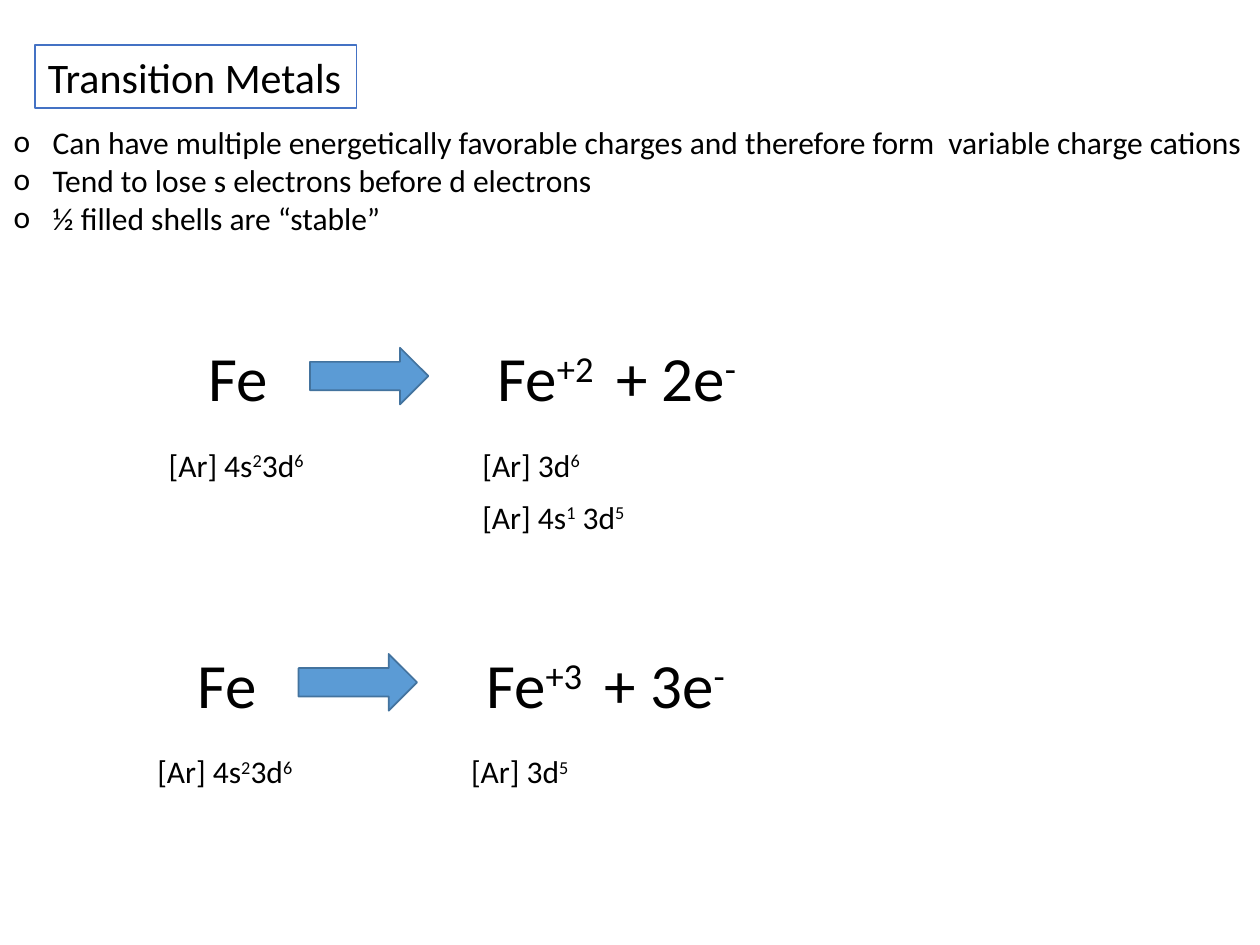
from lxml.etree import SubElement
from pptx import Presentation
from pptx.dml.color import RGBColor
from pptx.enum.shapes import MSO_SHAPE as SHAPE
from pptx.enum.text import MSO_ANCHOR as ANCHOR, MSO_AUTO_SIZE as AUTO, PP_ALIGN as ALIGN
from pptx.oxml.ns import qn
from pptx.util import Inches, Pt


def color(value):
    return RGBColor.from_string(value)


class SlideBuilder:
    font = "Calibri"
    ink = "000000"
    body_size = 18
    formula_size = 36

    def __init__(self, slide):
        self.s = slide

    def place(self, sp, x, y, w, h):
        sp.left, sp.top, sp.width, sp.height = map(Inches, (x, y, w, h))

    def paint(self, sp, fill, line):
        sp.fill.solid()
        sp.fill.fore_color.rgb = color(fill)
        sp.line.color.rgb = color(line)
        sp.line.width = Pt(1)

    def style(self, tf, size, auto_size=AUTO.SHAPE_TO_FIT_TEXT):
        tf.word_wrap = False
        tf.auto_size = auto_size
        tf.vertical_anchor = ANCHOR.TOP
        for p in tf.paragraphs:
            p.alignment = ALIGN.LEFT
            for r in p.runs:
                r.font.name = self.font
                r.font.size = Pt(size)
                r.font.color.rgb = color(self.ink)

    def title(self, text, x, y, w, h):
        sp = self.s.shapes.title
        self.place(sp, x, y, w, h)
        self.paint(sp, "FFFFFF", "4472C4")
        sp.text_frame.text = text
        self.style(sp.text_frame, 24, AUTO.NONE)

    def textbox(self, x, y, w, h):
        return self.s.shapes.add_textbox(*map(Inches, (x, y, w, h))).text_frame

    def bullets(self, items, x, y, w, h):
        tf = self.textbox(x, y, w, h)
        tf.text = "\n".join(items)
        self.style(tf, self.body_size)
        for p in tf.paragraphs:
            pPr = p._p.get_or_add_pPr()
            pPr.set("marL", str(Inches(0.31)))
            pPr.set("indent", str(Inches(-0.31)))
            SubElement(pPr, qn("a:buFont")).set("typeface", self.font)
            SubElement(pPr, qn("a:buChar")).set("char", "o")

    def formula(self, markup, size, x, y, w, h):
        tf = self.textbox(x, y, w, h)
        p = tf.paragraphs[0]
        for i, part in enumerate(markup.split("^")):
            if part:
                r = p.add_run()
                r.text = part
                if i % 2:
                    r._r.get_or_add_rPr().set("baseline", "30000")
        self.style(tf, size)

    def arrow(self, x, y, w, h):
        sp = self.s.shapes.add_shape(SHAPE.RIGHT_ARROW, *map(Inches, (x, y, w, h)))
        sp.shadow.inherit = False
        self.paint(sp, "5B9BD5", "43739E")

    def reaction(self, x, y, products, configurations):
        self.formula("Fe", self.formula_size, x + 0.32, y, 0.68, 0.71)
        self.formula("[Ar] 4s^2^3d^6^", self.body_size, x, y + 0.85, 1.31, 0.4)
        self.formula(products, self.formula_size, x + 2.61, y, 2.18, 0.71)
        self.arrow(x + 1.22, y + 0.12, 0.94, 0.45)
        for i, (markup, w) in enumerate(configurations):
            self.formula(markup, self.body_size, x + 2.49, y + 0.85 + i * 0.41, w, 0.4)


def main():
    prs = Presentation()
    prs.slide_width, prs.slide_height = Inches(10), Inches(7.5)
    builder = SlideBuilder(prs.slides.add_slide(prs.slide_layouts[5]))
    builder.title("Transition Metals", 0.28, 0.36, 2.55, 0.5)
    builder.bullets([
        "Can have multiple energetically favorable charges and therefore form  variable charge cations",
        "Tend to lose s electrons before d electrons",
        "½ filled shells are “stable”",
    ], 0.01, 0.93, 10.17, 1.01)
    builder.reaction(1.24, 2.64, "Fe^+2 ^ + 2e^-^",
                     [("[Ar] 3d^6^", 0.99), ("[Ar] 4s^1^ 3d^5^", 1.36)])
    builder.reaction(1.15, 5.07, "Fe^+3 ^ + 3e^-^", [("[Ar] 3d^5^", 0.99)])
    prs.save("out.pptx")


if __name__ == "__main__":
    main()
